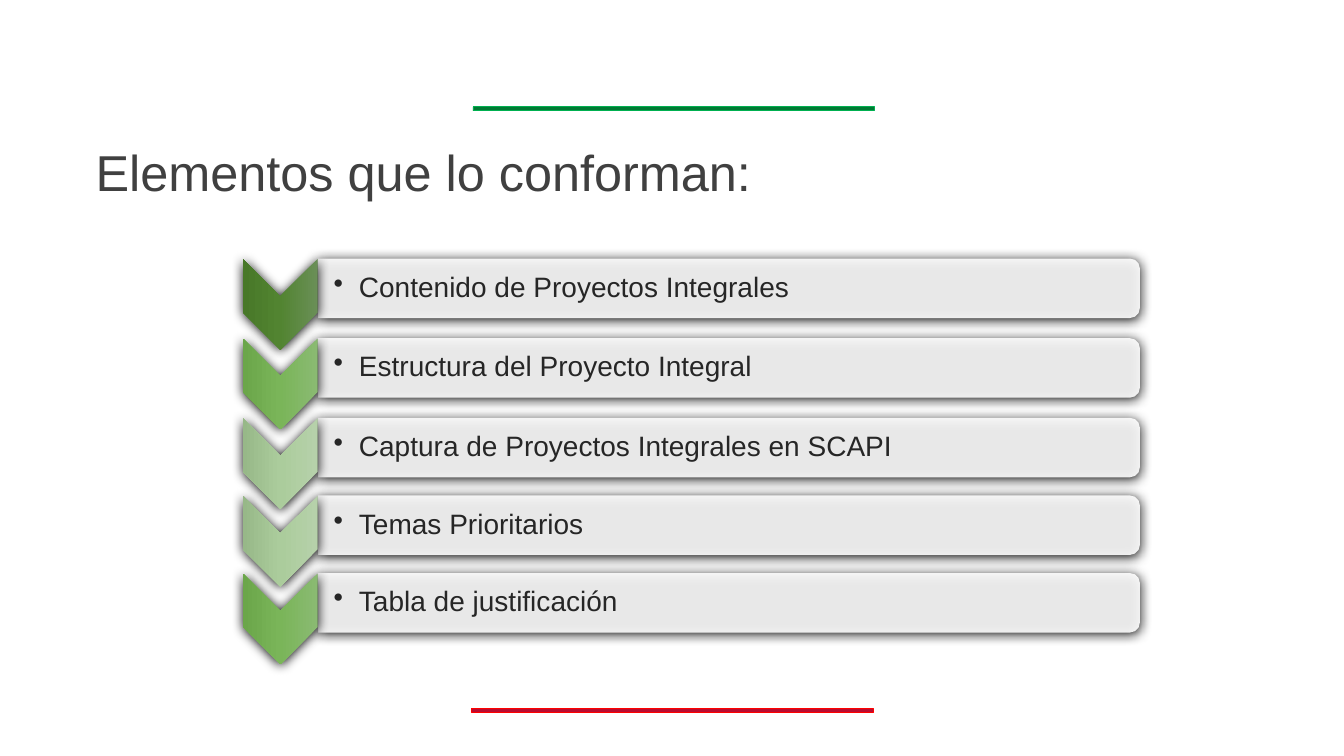
from pptx import Presentation
from pptx.dml.color import RGBColor
from pptx.enum.shapes import MSO_SHAPE as Preset
from pptx.enum.text import MSO_ANCHOR as Anchor, MSO_AUTO_SIZE as AutoSize
from pptx.oxml import parse_xml
from pptx.oxml.ns import nsdecls
from pptx.util import Inches, Pt

TITLE = "Elementos que lo conforman:"
DARK = ("6A8F57", "528431", "487828")
MEDIUM = ("8ABA72", "7AB559", "6BA64A")
LIGHT = ("B6D1AA", "ABCC9C", "97B888")
# text, middle of the bar, gradient of the chevron
ROWS = [
    ("Contenido de Proyectos Integrales", 2.86, DARK),
    ("Estructura del Proyecto Integral", 3.65, MEDIUM),
    ("Captura de Proyectos Integrales en SCAPI", 4.44, LIGHT),
    ("Temas Prioritarios", 5.21, LIGHT),
    ("Tabla de justificación", 5.98, MEDIUM),
]
# left, top, fill, outline
RULES = [(4.68, 7.03, "BA0C2F", "FF0000"), (4.69, 1.06, "007A33", "00B050")]
RULE_SIZE = (3.98, 0.04)
BAR_CENTER, BAR_LENGTH, BAR_HEIGHT = 7.23, 8.15, 0.59
CHEVRON_CENTER, CHEVRON_LENGTH, CHEVRON_WIDTH = 2.78, 0.9, 0.74
CHEVRON_DROP = 0.16
LABEL_LEFT, LABEL_WIDTH, LABEL_HEIGHT = 3.15, 8.11, 0.53


def color(value):
    return RGBColor.from_string(value)


def element(tag, attributes="", inner=""):
    return parse_xml(f"<a:{tag} {nsdecls('a')} {attributes}>{inner}</a:{tag}>")


def write(paragraph, text, size, ink):
    span = paragraph.add_run()
    span.text = text
    span.font.color.rgb = color(ink)
    for name, value in {"name": "Arial", "size": Pt(size)}.items():
        setattr(span.font, name, value)


def add_box(page, left, top, width, height, **settings):
    box = page.shapes.add_textbox(*map(Inches, (left, top, width, height)))
    for name, value in {"word_wrap": True, **settings}.items():
        setattr(box.text_frame, name, value)
    return box.text_frame.paragraphs[0]


def add_turned(page, preset, center_x, center_y, width, height):
    """Add an unlined, shadowed shape turned a quarter clockwise about its centre."""
    shape = page.shapes.add_shape(
        preset, Inches(center_x - width / 2), Inches(center_y - height / 2),
        Inches(width), Inches(height))
    shape.rotation = 90
    shape.line.fill.background()
    shape.shadow.inherit = False
    shape.element.spPr.find("{*}effectLst").append(element(
        "outerShdw",
        f'blurRad="{Pt(8.5)}" dist="{Pt(1)}" dir="5400000" algn="ctr" rotWithShape="0"',
        '<a:srgbClr val="000000"/>'))
    return shape


def add_rule(page, left, top, fill, outline):
    rule = page.shapes.add_shape(Preset.RECTANGLE, *map(Inches, (left, top, *RULE_SIZE)))
    rule.shadow.inherit = False
    rule.fill.solid()
    rule.fill.fore_color.rgb = color(fill)
    rule.line.color.rgb = color(outline)
    rule.line.width = Pt(0.5)


def add_row(page, text, middle, gradient):
    bar = add_turned(page, Preset.ROUND_2_SAME_RECTANGLE, BAR_CENTER, middle,
                     BAR_HEIGHT, BAR_LENGTH)
    bar.fill.solid()
    bar.fill.fore_color.rgb = color("FFFFFF")
    bar.element.spPr.find("{*}solidFill/{*}srgbClr").append(
        element("alpha", 'val="90000"'))

    para = add_box(page, LABEL_LEFT, middle - LABEL_HEIGHT / 2, LABEL_WIDTH, LABEL_HEIGHT,
                   vertical_anchor=Anchor.MIDDLE, margin_left=Inches(0.16),
                   margin_top=Inches(0.01), margin_right=Inches(0.01),
                   margin_bottom=Inches(0.01))
    properties = para._p.get_or_add_pPr()
    properties.set("marL", str(Inches(0.25)))
    properties.set("indent", str(Inches(-0.25)))
    properties.append(element("buChar", 'char="•"'))
    para.line_spacing = 0.9
    para.space_after = Pt(3)
    write(para, text, 20, "262626")

    chevron = add_turned(page, Preset.CHEVRON, CHEVRON_CENTER, middle + CHEVRON_DROP,
                         CHEVRON_LENGTH, CHEVRON_WIDTH)
    stops = "".join(
        f'<a:gs pos="{place * 50000}"><a:srgbClr val="{value}"/></a:gs>'
        for place, value in enumerate(gradient))
    chevron.element.spPr.find("{*}prstGeom").addnext(element(
        "gradFill", 'rotWithShape="1"',
        f'<a:gsLst>{stops}</a:gsLst><a:lin ang="5400000" scaled="0"/>'))


def main():
    deck = Presentation()
    deck.slide_width, deck.slide_height = Inches(13.33), Inches(7.5)
    page = deck.slides.add_slide(deck.slide_layouts[6])
    for rule in RULES:
        add_rule(page, *rule)
    title = add_box(page, 0.85, 1.35, 8.93, 0.71, auto_size=AutoSize.SHAPE_TO_FIT_TEXT)
    write(title, TITLE, 36, "404040")
    for row in ROWS:
        add_row(page, *row)
    deck.save("out.pptx")


if __name__ == "__main__":
    main()
